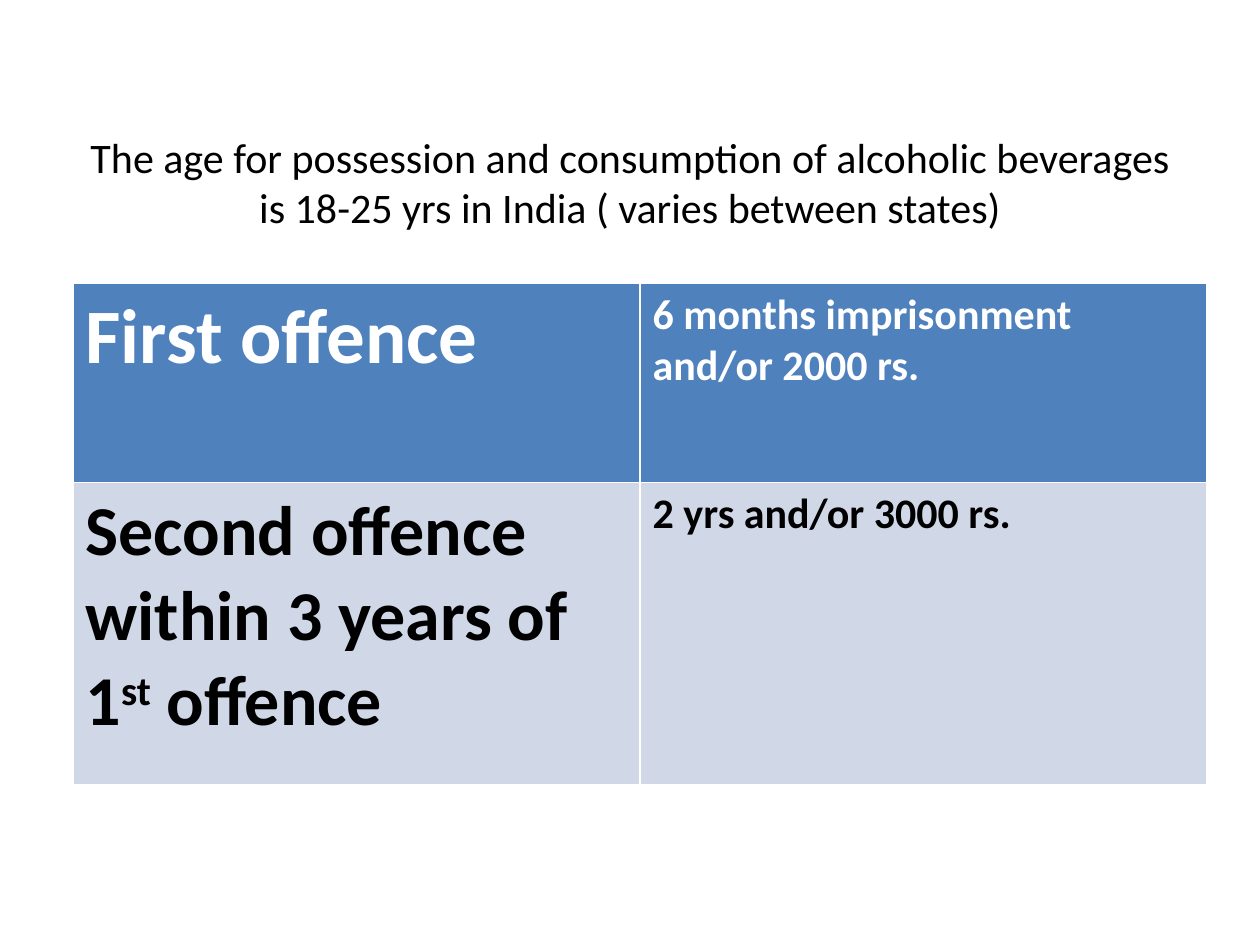
from pptx import Presentation
from pptx.dml.color import RGBColor
from pptx.enum.text import MSO_ANCHOR, PP_ALIGN
from pptx.util import Inches, Pt

MIDDLE, CENTER = MSO_ANCHOR.MIDDLE, PP_ALIGN.CENTER
FONT = "Calibri"
WIDE, HIGH = 10, 7.5
TITLE = ("The age for possession and consumption of alcoholic beverages "
         "is 18-25 yrs in India ( varies between states)")
ROWS = [
    {"high": 1.58, "fill": "4F81BD", "ink": "FFFFFF", "cells": [
        (44, ["First offence"]),
        (24, ["6 months imprisonment and/or 2000 rs."])]},
    {"high": 2.4, "fill": "D0D8E8", "ink": "000000", "cells": [
        (40, ["Second offence within 3 years of 1", "st", " offence"]),
        (24, ["2 yrs and/or 3000 rs."])]},
]
RAISED = "st"


def style(run, size, ink, bold=False):
    """Set the font of one run."""
    font = run.font
    font.name, font.size, font.bold = FONT, Pt(size), bold
    font.color.rgb = RGBColor.from_string(ink)


def add_title(slide):
    """Place and format the title."""
    title = slide.shapes.title
    title.left, title.top = Inches(0.05 * WIDE), Inches(0.04 * HIGH)
    title.width, title.height = Inches(0.9 * WIDE), Inches(2.28)
    frame = title.text_frame
    frame.text = TITLE
    frame.word_wrap, frame.vertical_anchor = True, MIDDLE
    para = frame.paragraphs[0]
    para.alignment = CENTER
    style(para.runs[0], 24, "000000")


def add_offences(slide):
    """Build the table of offences and penalties."""
    total = sum(row["high"] for row in ROWS)
    table = slide.shapes.add_table(
        len(ROWS), len(ROWS[0]["cells"]), Inches(0.58), Inches(0.3 * HIGH),
        Inches(0.9 * WIDE), Inches(total)).table
    for i, row in enumerate(ROWS):
        table.rows[i].height = Inches(row["high"])
        for j, (size, parts) in enumerate(row["cells"]):
            cell = table.cell(i, j)
            cell.fill.solid()
            cell.fill.fore_color.rgb = RGBColor.from_string(row["fill"])
            para = cell.text_frame.paragraphs[0]
            for part in parts:
                run = para.add_run()
                run.text = part
                style(run, size, row["ink"], True)
                if part == RAISED:
                    run.font._element.set("baseline", "30000")


def main():
    """Build and save the slide."""
    deck = Presentation()
    deck.slide_width, deck.slide_height = Inches(WIDE), Inches(HIGH)
    slide = deck.slides.add_slide(deck.slide_layouts[5])
    add_title(slide)
    add_offences(slide)
    deck.save("out.pptx")


if __name__ == "__main__":
    main()
